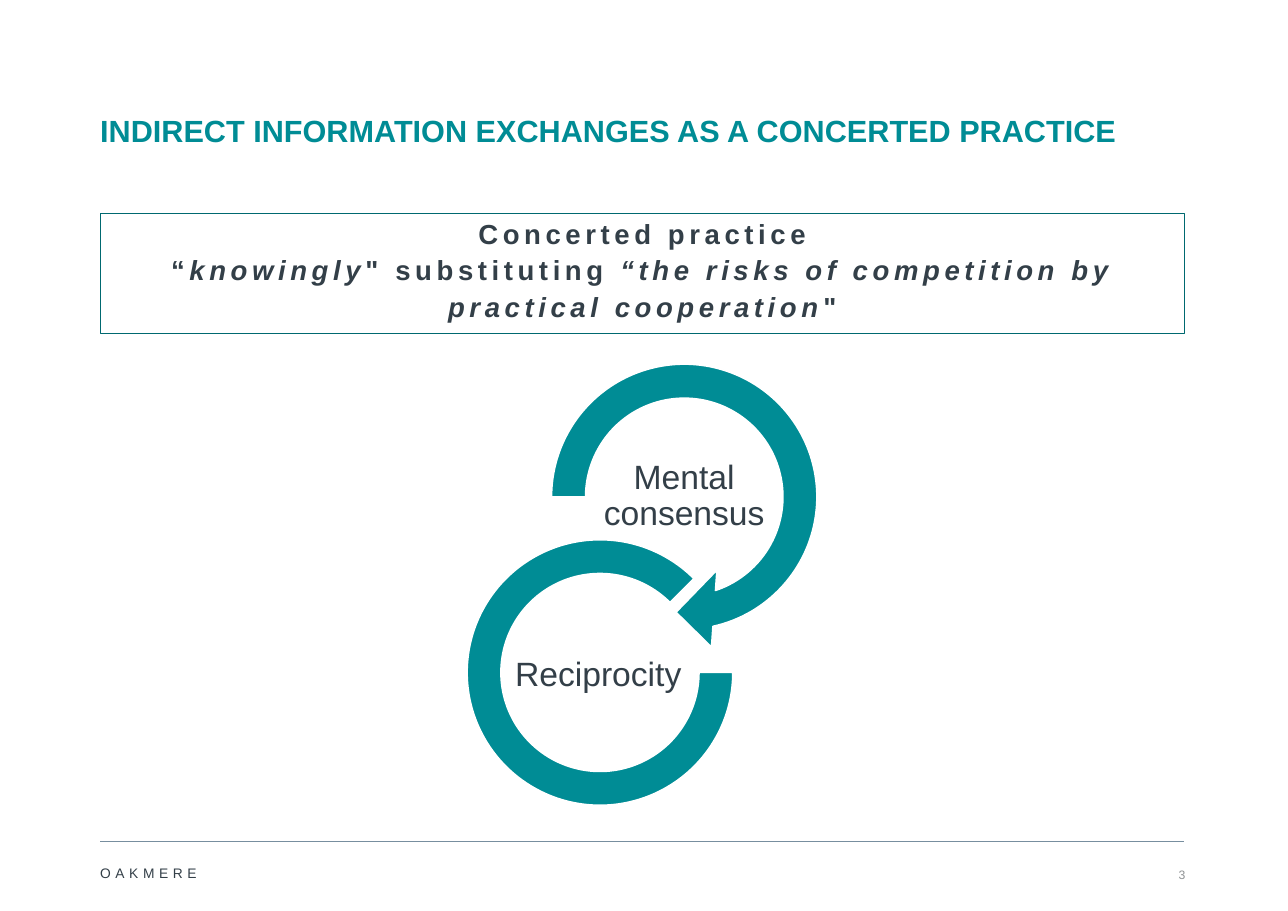
from pptx import Presentation
from pptx.dml.color import RGBColor
from pptx.enum.shapes import MSO_CONNECTOR, MSO_SHAPE
from pptx.enum.text import MSO_ANCHOR, PP_ALIGN
from pptx.oxml import parse_xml
from pptx.oxml.ns import nsdecls
from pptx.util import Inches, Pt

STRAIGHT = MSO_CONNECTOR.STRAIGHT
RECTANGLE, ARROW, ARC = MSO_SHAPE.RECTANGLE, MSO_SHAPE.CIRCULAR_ARROW, MSO_SHAPE.BLOCK_ARC
TOP, MIDDLE, BOTTOM = MSO_ANCHOR.TOP, MSO_ANCHOR.MIDDLE, MSO_ANCHOR.BOTTOM
LEFT, CENTER, RIGHT = PP_ALIGN.LEFT, PP_ALIGN.CENTER, PP_ALIGN.RIGHT

WIDTH, HEIGHT = Inches(11.69), Inches(8.27)
COLUMN, ROW = WIDTH / 100, HEIGHT / 100
MARGIN, CONTENT = 7.78, 84.17
COLORS = {
    "teal": "008C95",
    "border": "006970",
    "ink": "333F48",
    "rule": "778E9F",
    "number": "909395",
    "white": "FFFFFF",
}


def color(name):
    return RGBColor.from_string(COLORS[name])


def place(left, top, width, height):
    return [round(n) for n in (left * COLUMN, top * ROW, width * COLUMN, height * ROW)]


def set_all(target, values):
    for key, value in values.items():
        setattr(target, key, value)


def write(frame, paragraphs, size, ink="ink", bold=False, tracking=0,
          anchor=TOP, align=LEFT, spacing=1.0, inset=0, wrap=True):
    margins = {f"margin_{side}": Inches(inset) for side in ("left", "top", "right", "bottom")}
    set_all(frame, {"word_wrap": wrap, "vertical_anchor": anchor, **margins})
    for index, runs in enumerate(paragraphs):
        paragraph = frame.paragraphs[0] if index == 0 else frame.add_paragraph()
        set_all(paragraph, {"alignment": align, "line_spacing": spacing})
        for words, italic in runs:
            run = paragraph.add_run()
            run.text = words
            set_all(run.font, {"name": "Arial", "size": Pt(size), "bold": bold, "italic": italic})
            run.font.color.rgb = color(ink)
            if tracking:
                run.font._element.set("spc", str(tracking * 100))


def add_label(slide, box, words, size, **style):
    label = slide.shapes.add_textbox(*place(*box))
    write(label.text_frame, [[(words, False)]], size, **style)


def add_figure(slide, kind, box, outline, weight, fill=None, adjustments=()):
    figure = slide.shapes.add_shape(kind, *place(*box))
    figure.shadow.inherit = False
    for index, value in enumerate(adjustments):
        figure.adjustments[index] = value
    if fill:
        figure.fill.solid()
        figure.fill.fore_color.rgb = color(fill)
    else:
        figure.fill.background()
    figure.line.color.rgb = color(outline)
    figure.line.width = Pt(weight)
    return figure


def add_rule(slide, row):
    left, top, width, _ = place(MARGIN, row, CONTENT, 0)
    rule = slide.shapes.add_connector(STRAIGHT, left, top, left + width, top)
    rule.line.color.rgb = color("rule")
    rule.line.width = Pt(0.5)
    rule._element.spPr.append(parse_xml(f"<a:effectLst {nsdecls('a')}/>"))


def add_definition(slide):
    definition = add_figure(slide, RECTANGLE, (MARGIN, 23.46, CONTENT, 13.18), "border", 0.75)
    write(definition.text_frame, [
        [("Concerted practice", False)],
        [("“", False), ("knowingly", True), ('" substituting ', False),
         ("“the risks of competition by practical cooperation", True), ('"', False)],
    ], 18, bold=True, tracking=3, align=CENTER, spacing=1.1)


def add_cycle(slide):
    stages = (
        ("Mental consensus", ARROW, (41.15, 37.61, 23.95, 33.86),
         (0.11, 11.42, 45, 108, 0.125), (46.45, 49.82)),
        ("Reciprocity", ARC, (36.27, 59.25, 20.62, 29.14),
         (0, 189, 0.127), (39.78, 69.41)),
    )
    for stage, kind, ring, adjustments, corner in stages:
        add_figure(slide, kind, ring, "white", 1, "teal", adjustments)
        add_label(slide, (*corner, 13.34, 9.43), stage, 22, anchor=MIDDLE,
                  align=CENTER, spacing=0.9, inset=0.02)


def main():
    deck = Presentation()
    set_all(deck, {"slide_width": WIDTH, "slide_height": HEIGHT})
    slide = deck.slides.add_slide(deck.slide_layouts[6])
    add_rule(slide, 92.38)
    add_label(slide, (MARGIN, 94.32, 8.98, 2.42), "OAKMERE", 9,
              tracking=3, anchor=BOTTOM, spacing=1.5)
    add_label(slide, (89.65, 94.44, 2.4, 2.42), "3", 8, ink="number",
              anchor=BOTTOM, align=RIGHT, wrap=False)
    add_label(slide, (MARGIN, 10.4, CONTENT, 5.93),
              "INDIRECT INFORMATION EXCHANGES AS A CONCERTED PRACTICE", 20,
              ink="teal", bold=True, anchor=BOTTOM, spacing=1.1)
    add_definition(slide)
    add_cycle(slide)
    deck.save("out.pptx")


if __name__ == "__main__":
    main()
